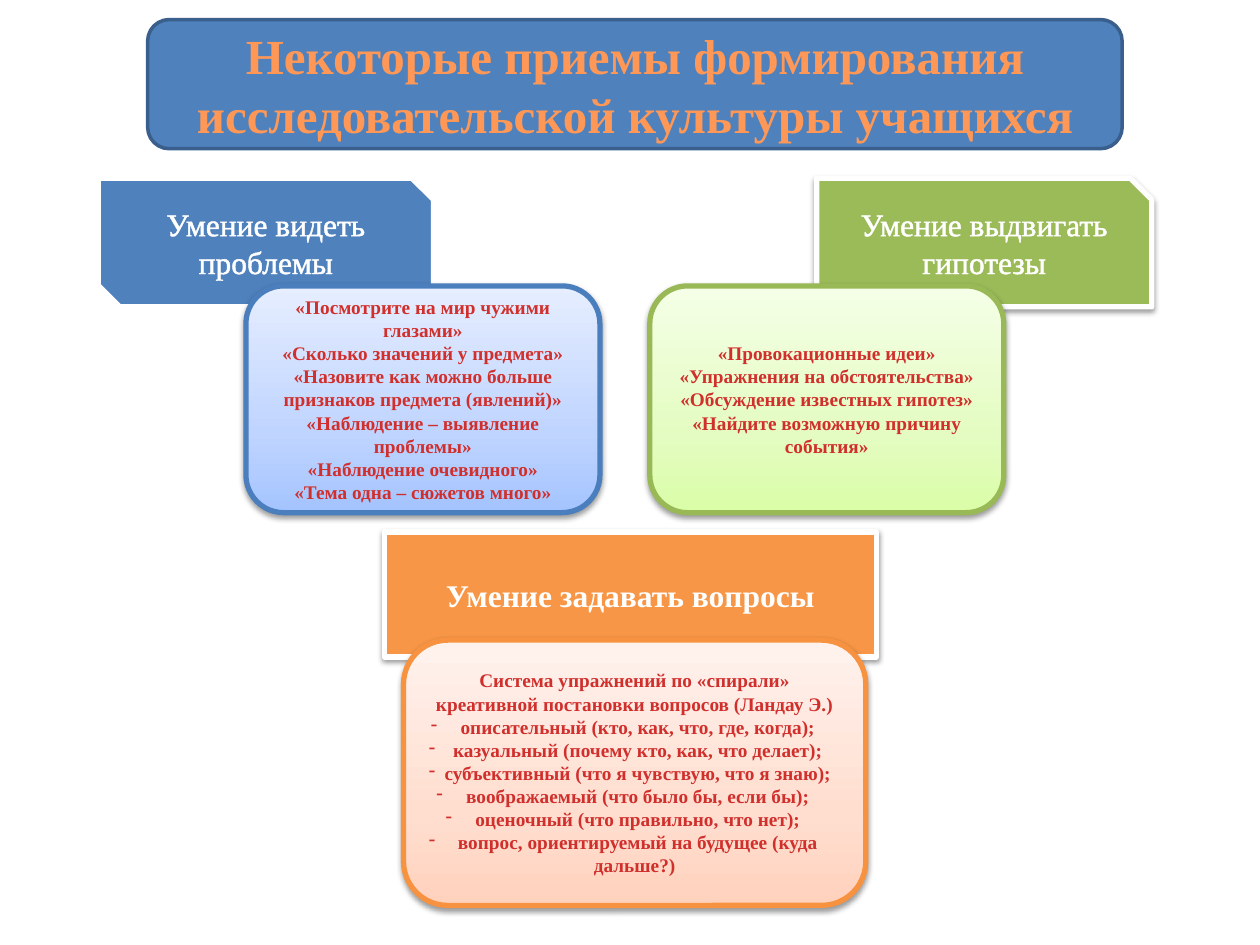
"""Build a slide on ways to develop students' research culture."""
import dataclasses

import lxml.etree
import pptx
import pptx.dml.color
import pptx.enum.shapes
import pptx.enum.text
import pptx.oxml
import pptx.oxml.ns
import pptx.util

Pt = pptx.util.Pt
RGBColor = pptx.dml.color.RGBColor
Shapes = pptx.enum.shapes.MSO_SHAPE
qn = pptx.oxml.ns.qn
DRAWING = pptx.oxml.ns.nsdecls("a")


@dataclasses.dataclass(frozen=True)
class Theme:
    font: str = "Times New Roman"
    title_size: float = 28
    heading_size: float = 18
    body_size: float = 11
    title_color: str = "FF9856"
    body_color: str = "D02F2C"
    white: str = "FFFFFF"
    blue: str = "4F81BD"
    title_line: str = "3A5F8C"
    green: str = "9BBB59"
    orange: str = "F79646"
    blue_card: tuple = ("4B7EBC", "A4C4FF", "BFD4FF", "E6EEFF")
    green_card: tuple = ("98B955", "DAFDA7", "E4FCC2", "F5FFE7")
    orange_card: tuple = ("F69240", "FFD2BD", "FFDED0", "FFF2ED")


def write_text(shape, lines, *, font, size, color, bold=False, outline=None, bullets_from=None):
    frame = shape.text_frame
    frame.word_wrap = True
    frame.vertical_anchor = pptx.enum.text.MSO_ANCHOR.MIDDLE
    for index, line in enumerate(lines):
        paragraph = frame.paragraphs[0] if index == 0 else frame.add_paragraph()
        paragraph.alignment = pptx.enum.text.PP_ALIGN.CENTER
        if bullets_from is not None and index >= bullets_from:
            properties = paragraph._p.get_or_add_pPr()
            lxml.etree.SubElement(properties, qn("a:buFontTx"))
            lxml.etree.SubElement(properties, qn("a:buChar"), char="-")
        run = paragraph.add_run()
        run.text = line
        run.font.name = font
        run.font.size = Pt(size)
        run.font.bold = bold
        run.font.color.rgb = RGBColor.from_string(color)
        if outline:
            run._r.get_or_add_rPr().insert(0, pptx.oxml.parse_xml(
                f'<a:ln {DRAWING} w="{Pt(1.45)}"><a:solidFill>'
                f'<a:srgbClr val="{outline}"/></a:solidFill></a:ln>'))


class SlideBuilder:
    def __init__(self, slide, theme):
        self.slide = slide
        self.theme = theme

    def box(self, kind, bounds, line, width, shadow):
        shape = self.slide.shapes.add_shape(kind, *map(Pt, bounds))
        shape.line.color.rgb = RGBColor.from_string(line)
        shape.line.width = Pt(width)
        shape.shadow.inherit = False
        if shadow:
            effects = shape._element.spPr.find(qn("a:effectLst"))
            effects.append(pptx.oxml.parse_xml(
                f'<a:outerShdw {DRAWING} blurRad="{Pt(3.1)}" dist="{Pt(1.6)}" dir="5400000" '
                'rotWithShape="0"><a:srgbClr val="000000"><a:alpha val="38000"/>'
                '</a:srgbClr></a:outerShdw>'))
        return shape

    def solid_box(self, kind, bounds, fill, line, width=3, shadow=True):
        shape = self.box(kind, bounds, line, width, shadow)
        shape.fill.solid()
        shape.fill.fore_color.rgb = RGBColor.from_string(fill)
        return shape

    def title(self, text, bounds):
        theme = self.theme
        shape = self.solid_box(Shapes.ROUNDED_RECTANGLE, bounds, theme.blue,
                               theme.title_line, width=2, shadow=False)
        write_text(shape, [text], font=theme.font, size=theme.title_size,
                   color=theme.title_color, bold=True)

    def heading(self, text, bounds, fill, kind=Shapes.SNIP_2_DIAG_RECTANGLE,
                shadow=True, bold=False):
        theme = self.theme
        shape = self.solid_box(kind, bounds, fill, theme.white, shadow=shadow)
        write_text(shape, [text], font=theme.font, size=theme.heading_size,
                   color=theme.white, bold=bold, outline=None if bold else theme.white)

    def card(self, lines, bounds, colors, bullets_from=None):
        theme = self.theme
        line, *stops = colors
        shape = self.box(Shapes.ROUNDED_RECTANGLE, bounds, line, 3, True)
        shape.fill.gradient()
        gradient = shape._element.spPr.find(qn("a:gradFill"))
        stop_list = gradient.find(qn("a:gsLst"))
        for stop in list(stop_list):
            stop_list.remove(stop)
        for position, color in zip((0, 35, 100), stops):
            stop = lxml.etree.SubElement(stop_list, qn("a:gs"), pos=str(position * 1000))
            lxml.etree.SubElement(stop, qn("a:srgbClr"), val=color)
        gradient.find(qn("a:lin")).set("ang", "16200000")
        write_text(shape, lines, font=theme.font, size=theme.body_size,
                   color=theme.body_color, bold=True, bullets_from=bullets_from)


def main():
    presentation = pptx.Presentation()
    presentation.slide_width, presentation.slide_height = Pt(720), Pt(540)
    slide = presentation.slides.add_slide(presentation.slide_layouts[6])
    theme = Theme()
    builder = SlideBuilder(slide, theme)

    builder.title("Некоторые приемы формирования исследовательской культуры учащихся",
                  (84.4, 11.2, 556.9, 73.8))
    heading_top, heading_size = 101.9, (191.5, 73.4)
    card_top, card_size = 163.4, (202.3, 129.6)
    builder.heading("Умение видеть проблемы", (56.2, heading_top, *heading_size),
                    theme.blue, shadow=False)
    builder.card([
        "«Посмотрите на мир чужими глазами»",
        "«Сколько значений у предмета»",
        "«Назовите как можно больше признаков предмета (явлений)»",
        "«Наблюдение – выявление проблемы»",
        "«Наблюдение очевидного»",
        "«Тема одна – сюжетов много»",
    ], (140.5, card_top, *card_size), theme.blue_card)
    builder.heading("Умение выдвигать гипотезы", (466.7, heading_top, *heading_size),
                    theme.green)
    builder.card([
        "«Провокационные идеи»",
        "«Упражнения на обстоятельства»",
        "«Обсуждение известных гипотез»",
        "«Найдите возможную причину события»",
    ], (371.3, card_top, *card_size), theme.green_card)
    builder.heading("Умение задавать вопросы", (219.6, 304, 281.2, 71.5),
                    theme.orange, kind=Shapes.RECTANGLE, bold=True)
    builder.card([
        "Система упражнений по «спирали» креативной постановки вопросов (Ландау Э.)",
        "описательный (кто, как, что, где, когда);",
        "казуальный (почему кто, как, что делает);",
        "субъективный (что я чувствую, что я знаю);",
        "воображаемый (что было бы, если бы);",
        "оценочный (что правильно, что нет);",
        "вопрос, ориентируемый на будущее (куда дальше?)",
    ], (230.6, 365.8, 264.2, 151.6), theme.orange_card, bullets_from=1)
    presentation.save("out.pptx")


if __name__ == "__main__":
    main()
